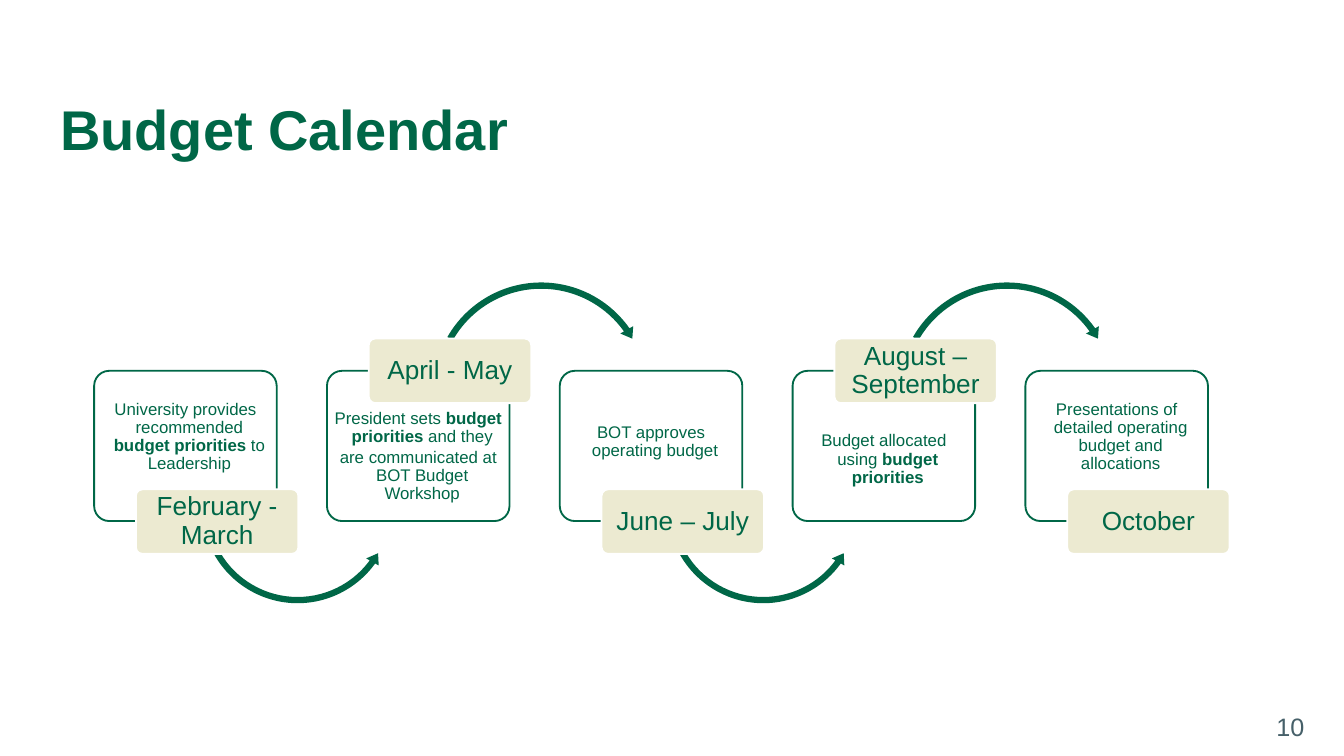
from lxml.etree import SubElement
from pptx import Presentation
from pptx.dml.color import RGBColor
from pptx.enum.shapes import MSO_SHAPE
from pptx.enum.text import MSO_ANCHOR, PP_ALIGN
from pptx.oxml.ns import qn
from pptx.util import Cm, Pt

COLORS = {"green": "006747", "sand": "ECEAD1", "white": "FFFFFF", "slate": "466069"}

FIRST_CARD_LEFT, CARD_STEP = 1.78, 4.4

# Each stage: months, room above the description (cm), paragraphs of (text, bold) runs
STAGES = [
    ("February - March", 0.48, [[("University provides recommended ", False),
                                 ("budget priorities", True), (" to Leadership", False)]]),
    ("April - May", 0.66, [[("President sets ", False), ("budget priorities ", True),
                            ("and they", False)],
                           [("are communicated at BOT Budget Workshop", False)]]),
    ("June – July", 0.92, [[("BOT approves operating budget", False)]]),
    ("August – September", 1.08, [[("Budget allocated using ", False),
                                   ("budget priorities", True)]]),
    ("October", 0.48, [[("Presentations of detailed operating budget and allocations",
                         False)]]),
]


def color(name):
    return RGBColor.from_string(COLORS[name])


def style(paragraph, size, name="green", align=PP_ALIGN.CENTER, spacing=0.9):
    paragraph.alignment = align
    paragraph.line_spacing = spacing
    font = paragraph.font
    font.name, font.size = "Arial", Pt(size)
    font.color.rgb = color(name)


def set_margins(frame, side, top, bottom):
    frame.word_wrap = True
    frame.margin_left = frame.margin_right = Cm(side)
    frame.margin_top, frame.margin_bottom = Cm(top), Cm(bottom)


def add_text(slide, text, left, top, width, height):
    """Add a one-paragraph text box and return its frame."""
    frame = slide.shapes.add_textbox(Cm(left), Cm(top), Cm(width), Cm(height)).text_frame
    frame.word_wrap = True
    frame.text = text
    return frame


def add_filled(slide, preset, box, adjustments, fill, line=None):
    shape = slide.shapes.add_shape(preset, *map(Cm, box))
    shape.shadow.inherit = False
    for index, value in enumerate(adjustments):
        shape.adjustments[index] = value
    shape.fill.solid()
    shape.fill.fore_color.rgb = color(fill)
    if line:
        shape.line.color.rgb = color(line)
        shape.line.width = Pt(1)
    else:
        shape.line.fill.background()
    return shape


def add_card(slide, left, room_above, description):
    card = add_filled(slide, MSO_SHAPE.ROUNDED_RECTANGLE, (left, 7.01, 3.45, 2.84),
                      [0.1], "white", "green")
    fill_color = card.fill._xPr.find(qn("a:solidFill"))[0]
    SubElement(fill_color, qn("a:alpha"), val="90000")
    frame = card.text_frame
    set_margins(frame, 0.05, room_above, 0.05)
    frame.vertical_anchor = MSO_ANCHOR.TOP
    for index, runs in enumerate(description):
        paragraph = frame.add_paragraph() if index else frame.paragraphs[0]
        properties = paragraph._p.get_or_add_pPr()
        properties.set("marL", str(Cm(0.15)))
        properties.set("indent", str(-Cm(0.15)))
        style(paragraph, 9)
        paragraph.space_after = Pt(1.35)
        for text, bold in runs:
            run = paragraph.add_run()
            run.text = text
            run.font.bold = bold


def add_arrow(slide, left, rising):
    """Add the arc to the next stage: over the cards if rising, else under them."""
    if rising:
        add_filled(slide, MSO_SHAPE.CIRCULAR_ARROW, (left + 1.93, 5.26, 4.24, 4.24),
                   [0.028, 3.408, 194.837, 125.755, 0.033], "green")
    else:
        add_filled(slide, MSO_SHAPE.LEFT_CIRCULAR_ARROW, (left + 1.96, 7.71, 3.77, 3.77),
                   [0.031, 3.85, 21.6, 90.245, 0.036], "green")


def add_months(slide, left, months, above):
    label = add_filled(slide, MSO_SHAPE.ROUNDED_RECTANGLE,
                       (left + 0.79, 6.4 if above else 9.25, 3.07, 1.22),
                       [0.1], "sand", "white")
    frame = label.text_frame
    set_margins(frame, 0.08, 0.05, 0.05)
    frame.vertical_anchor = MSO_ANCHOR.MIDDLE
    frame.text = months
    style(frame.paragraphs[0], 14)


def main():
    deck = Presentation()
    deck.slide_width, deck.slide_height = Cm(25.4), Cm(14.29)
    slide = deck.slides.add_slide(deck.slide_layouts[6])

    title = add_text(slide, "Budget Calendar", 0.89, 1.8, 22.89, 1.73).paragraphs[0]
    style(title, 30, align=PP_ALIGN.LEFT)
    title.font.bold = True

    for index, (months, room_above, description) in enumerate(STAGES):
        left = FIRST_CARD_LEFT + index * CARD_STEP
        above = index % 2 == 1
        add_card(slide, left, room_above, description)
        if index < len(STAGES) - 1:
            add_arrow(slide, left, above)
        add_months(slide, left, months, above)

    page_number = add_text(slide, "10", 19.18, 13.36, 5.72, 0.76)
    page_number.vertical_anchor = MSO_ANCHOR.MIDDLE
    style(page_number.paragraphs[0], 13.5, "slate", PP_ALIGN.RIGHT, 1.0)

    deck.save("out.pptx")


if __name__ == "__main__":
    main()
